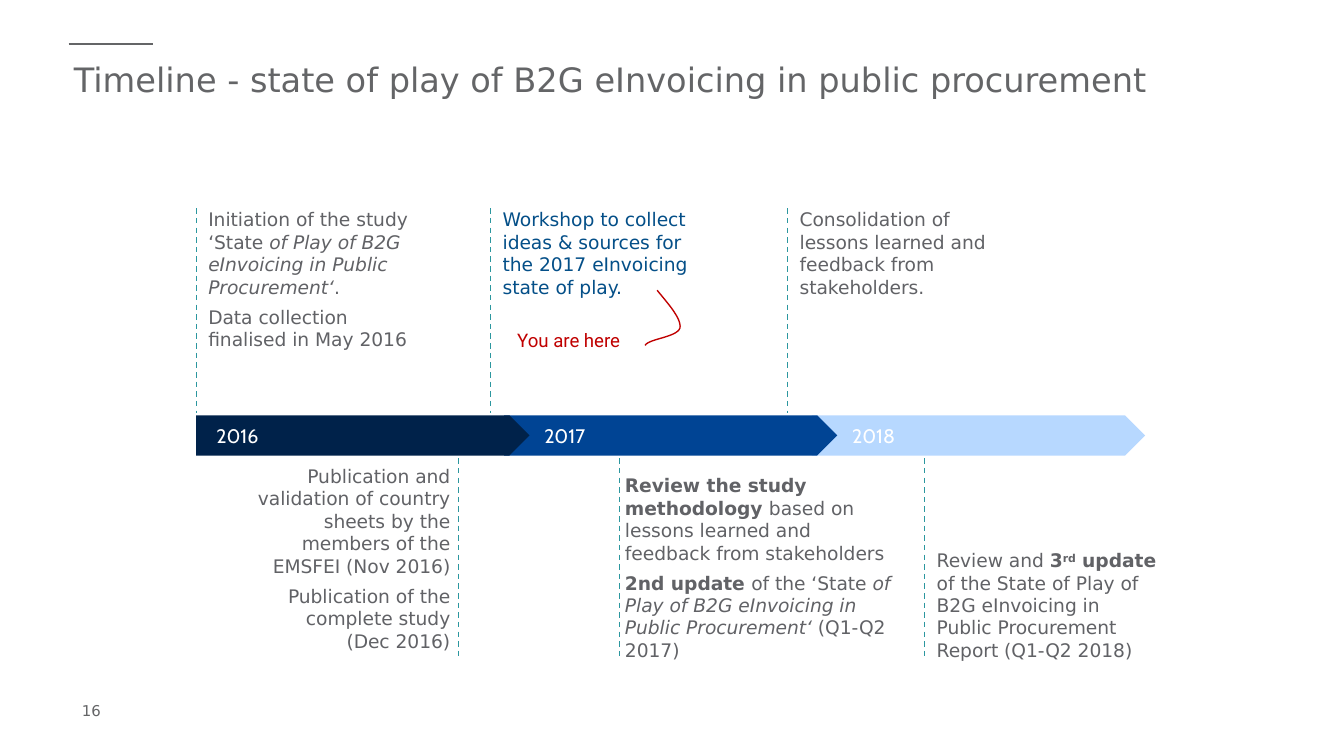
from dataclasses import dataclass

from lxml.etree import SubElement
from pptx import Presentation
from pptx.dml.color import RGBColor as Rgb
from pptx.enum.dml import MSO_LINE
from pptx.enum.shapes import MSO_CONNECTOR as Connector, MSO_SHAPE as Preset
from pptx.enum.text import MSO_ANCHOR as Anchor, PP_ALIGN as Align
from pptx.oxml.ns import qn
from pptx.util import Emu, Pt

PX = 9144


@dataclass(frozen=True)
class Theme:
    """Colours, fonts and type sizes of the slide."""
    heading: str = "646567"
    body: str = "616266"
    highlight: str = "044F88"
    guide: str = "2C979F"
    marker: str = "C00000"
    on_year: str = "FFFFFF"
    years: tuple = ("00224A", "004494", "B7D8FF")
    main_font: str = "DejaVu Sans"
    year_font: str = "Cabin"
    marker_font: str = "Roboto"
    title_size: float = 18
    body_size: float = 10
    year_size: float = 10.5
    number_size: float = 8


THEME = Theme()


def px(*lengths):
    """Turn px lengths into EMU."""
    return [Emu(length * PX) for length in lengths]


def write(frame, paragraphs, size, color, font=THEME.main_font, insets=(10, 5, 10, 5),
          anchor=Anchor.TOP, align=Align.LEFT):
    """Fill a text frame with paragraphs, each a list of (text, styles) pieces."""
    frame.word_wrap = True
    frame.vertical_anchor = anchor
    frame.margin_left, frame.margin_top, frame.margin_right, frame.margin_bottom = px(*insets)
    for index, pieces in enumerate(paragraphs):
        paragraph = frame.add_paragraph() if index else frame.paragraphs[0]
        paragraph.alignment = align
        paragraph.space_after = Pt(4 if len(paragraphs) > 1 else 0)
        paragraph.font.size, paragraph.font.name = Pt(size), font
        paragraph.font.color.rgb = Rgb.from_string(color)
        for text, styles in pieces:
            for line_index, line in enumerate(text.split("\n")):
                if line_index:
                    paragraph.add_line_break()
                run = paragraph.add_run()
                run.text = line
                if "b" in styles:
                    run.font.bold = True
                if "i" in styles:
                    run.font.italic = True
                if "^" in styles:
                    run.font._element.set("baseline", "30000")


def add_text(slide, box, paragraphs, size, color, **options):
    """Add a text box at the given px box."""
    write(slide.shapes.add_textbox(*px(*box)).text_frame, paragraphs, size, color, **options)


def add_rule(slide, start, end, color, width, dashed=False):
    """Draw a straight line between two px points."""
    rule = slide.shapes.add_connector(Connector.STRAIGHT, *px(*start, *end))
    rule.line.color.rgb = Rgb.from_string(color)
    rule.line.width = Pt(width)
    if dashed:
        rule.line.dash_style = MSO_LINE.DASH
    SubElement(rule._element.spPr, qn("a:effectLst"))


def add_heading(slide, box, title):
    """Place the short rule and the title below it."""
    left, top, width, height = box
    add_rule(slide, (left, top), (left + 63, top), THEME.heading, 1)
    add_text(slide, (left, top + 6, width, height - 6), [[(title, "")]],
             THEME.title_size, THEME.heading, insets=(4, 5, 4, 5))


def add_milestone(slide, box, guide, paragraphs, color=THEME.body, **options):
    """Place a milestone text with its dashed guide, given as (x, top, bottom)."""
    x, top, bottom = guide
    add_text(slide, box, paragraphs, THEME.body_size, color, insets=(9, 0, 0, 0), **options)
    add_rule(slide, (x, top), (x, bottom), THEME.guide, 0.75, dashed=True)


def add_year_band(slide, box, years):
    """Place overlapping year arrows, the earliest in front."""
    left, top, width, height = box
    step = 229
    arrow_width = width - step * (len(years) - 1)
    for index in reversed(range(len(years))):
        arrow = slide.shapes.add_shape(
            Preset.PENTAGON, *px(left + step * index, top, arrow_width, height))
        arrow.shadow.inherit = False
        arrow.fill.solid()
        arrow.fill.fore_color.rgb = Rgb.from_string(THEME.years[index])
        arrow.line.fill.background()
        write(arrow.text_frame, [[(years[index], "")]], THEME.year_size, THEME.on_year,
              THEME.year_font, (30 if index else 15, 5, 4, 5), Anchor.MIDDLE)


def bezier(start, control, other, end, steps=16):
    """Return the points of a cubic curve after its start."""
    points = []
    for step in range(1, steps + 1):
        t = step / steps
        weights = ((1 - t) ** 3, 3 * t * (1 - t) ** 2, 3 * t * t * (1 - t), t ** 3)
        points.append(tuple(
            round(PX * sum(w * value for w, value in zip(weights, axis)))
            for axis in zip(start, control, other, end)))
    return points


def add_here_marker(slide, box, label):
    """Place the label and the curve that leads from it to the workshop."""
    left, top, width, height = box
    start, bend, end = (left + 114, top), (left + 131, top + 28), (left + 105, top + 41)
    curve = slide.shapes.build_freeform(*px(*start))
    curve.add_line_segments(
        bezier(start, (left + 123, top + 11), (left + 132, top + 21), bend)
        + bezier(bend, (left + 129, top + 35), (left + 108, top + 36), end), close=False)
    pointer = curve.convert_to_shape()
    pointer.shadow.inherit = False
    pointer.fill.background()
    pointer.line.color.rgb = Rgb.from_string(THEME.marker)
    pointer.line.width = Pt(0.75)
    add_text(slide, (left, top + 24, width, height - 24), [[(label, "")]],
             THEME.body_size, THEME.marker, font=THEME.marker_font)


def add_upper_milestones(slide, box):
    """Place the milestones above the band, each right of its guide."""
    left, top, width, height = box
    milestones = [
        (0, THEME.body, [
            [("Initiation of the study ‘State ", ""),
             ("of Play of B2G eInvoicing in Public Procurement‘", "i"), (".", "")],
            [("Data collection finalised in May 2016", "")]]),
        (219, THEME.highlight, [[(
            "Workshop to collect ideas & sources for the 2017 eInvoicing state of play.", "")]]),
        (440, THEME.body, [[(
            "Consolidation of lessons learned and feedback from stakeholders.", "")]]),
    ]
    for offset, color, paragraphs in milestones:
        x = left + offset
        add_milestone(slide, (x, top, 166, 81), (x, top, top + height), paragraphs, color)


def add_lower_milestones(slide, box):
    """Place the milestones below the band, standing on a common bottom."""
    left, top, width, height = box
    milestones = [
        ((0, 63, 166), 172, Align.RIGHT, [
            [("Publication and validation of country sheets by the members of the "
              "EMSFEI (Nov 2016)", "")],
            [("Publication of the complete study\n(Dec 2016)", "")]]),
        ((287, 70, 209), 292, Align.LEFT, [
            [("Review the study methodology ", "b"),
             ("based on lessons learned and feedback from stakeholders", "")],
            [("2nd update ", "b"), ("of the ‘State ", ""),
             ("of Play of B2G eInvoicing in Public Procurement‘ ", "i"), ("(Q1-Q2 2017)", "")]]),
        ((519, 70, 174), 519, Align.LEFT, [
            [("Review and ", ""), ("3", "b"), ("rd", "b^"), (" update ", "b"),
             ("of the State of Play of B2G eInvoicing in Public Procurement Report "
              "(Q1-Q2 2018)", "")]]),
    ]
    for (x, y, text_width), guide_x, align, paragraphs in milestones:
        add_milestone(slide, (left + x, top + y, text_width, 81),
                      (left + guide_x, top, top + height), paragraphs,
                      anchor=Anchor.BOTTOM, align=align)


def main():
    """Build the timeline slide and save it."""
    deck = Presentation()
    deck.slide_width = Emu(1000 * PX)
    deck.slide_height = Emu(deck.slide_width * 9 // 16)
    slide = deck.slides.add_slide(deck.slide_layouts[6])
    add_heading(slide, (51, 33, 899, 83),
                "Timeline - state of play of B2G eInvoicing in public procurement")
    add_text(slide, (51, 517, 102, 24), [[("16", "")]], THEME.number_size, THEME.heading,
             anchor=Anchor.MIDDLE)
    add_upper_milestones(slide, (146, 155, 606, 152))
    add_lower_milestones(slide, (169, 341, 693, 148))
    add_year_band(slide, (146, 309, 706, 30), ("2016", "2017", "2018"))
    add_here_marker(slide, (375, 216, 111, 51), "You are here")
    deck.save("out.pptx")


if __name__ == "__main__":
    main()
